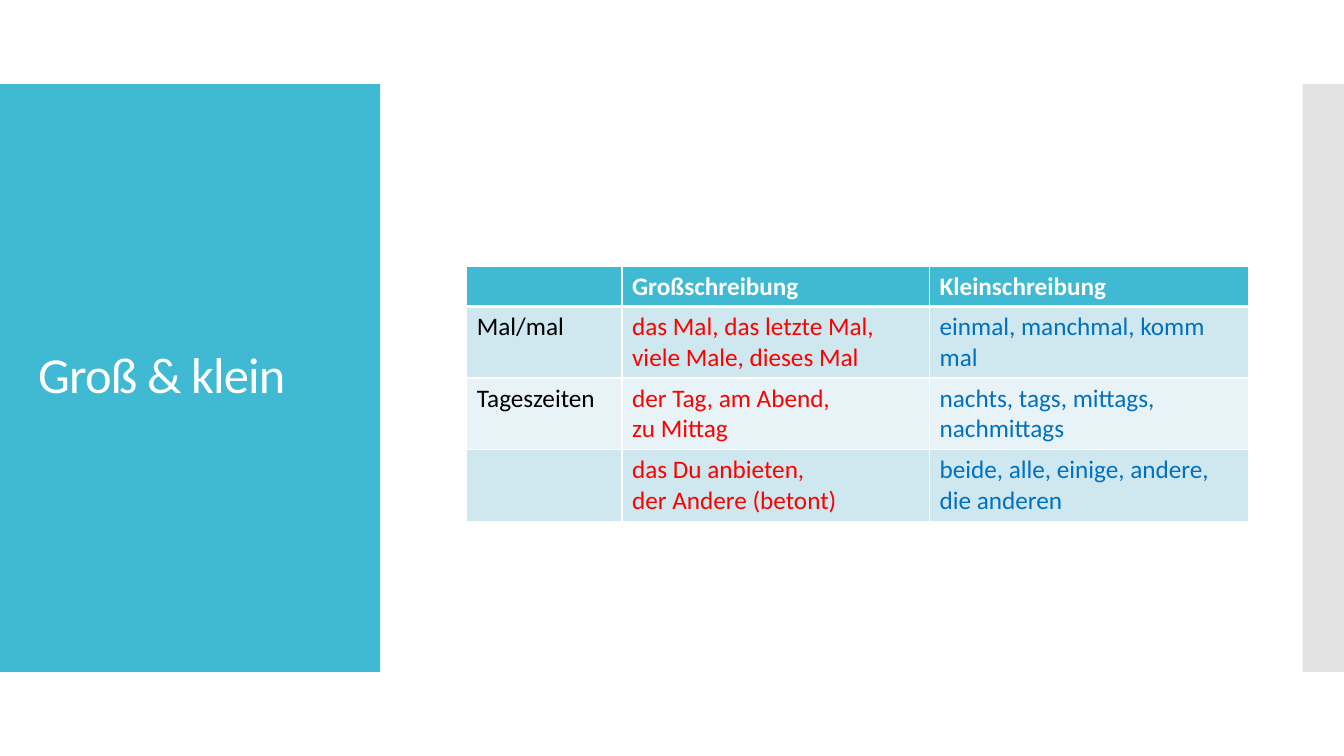
from dataclasses import dataclass

from lxml.etree import SubElement
from pptx import Presentation
from pptx.dml.color import RGBColor
from pptx.enum.shapes import MSO_SHAPE
from pptx.enum.text import MSO_ANCHOR
from pptx.oxml.ns import qn
from pptx.util import Inches, Pt

WIDTH, HEIGHT = 13.33, 7.5
BAND_TOP, BAND_HEIGHT = HEIGHT / 9, HEIGHT * 7 / 9


@dataclass(frozen=True)
class Theme:
    font: str = "Calibri"
    title_size: int = 36
    table_size: int = 18
    accent: str = "40BAD2"
    edge: str = "C8C8C8"
    white: str = "FFFFFF"
    label: str = "000000"
    uppercase: str = "FF0000"
    lowercase: str = "0070C0"
    bands: tuple = ("CFE7EE", "E8F3F7")


THEME = Theme()
COLUMN_WIDTHS = (1.54, 3.05, 3.16)
HEADER_HEIGHT, ROW_HEIGHT = 0.4, 0.71
ROWS = (
    ("", "Großschreibung", "Kleinschreibung"),
    ("Mal/mal", "das Mal, das letzte Mal, viele Male, dieses Mal",
     "einmal, manchmal, komm mal"),
    ("Tageszeiten", "der Tag, am Abend,\nzu Mittag",
     "nachts, tags, mittags, nachmittags"),
    ("", "das Du anbieten,\nder Andere (betont)",
     "beide, alle, einige, andere, die anderen"),
)


def paint(target, color):
    target.fill.solid()
    target.fill.fore_color.rgb = RGBColor.from_string(color)


def style_text(frame, size, color, bold=False):
    for para in frame.paragraphs:
        for span in para.runs:
            span.font.name = THEME.font
            span.font.size = Pt(size)
            span.font.bold = bold
            span.font.color.rgb = RGBColor.from_string(color)


def add_band(page, left, width, color, opacity=None):
    """Add a side panel; opacity is a percentage."""
    band = page.shapes.add_shape(
        MSO_SHAPE.RECTANGLE, Inches(left), Inches(BAND_TOP),
        Inches(width), Inches(BAND_HEIGHT))
    band.shadow.inherit = False
    band.line.fill.background()
    paint(band, color)
    if opacity is not None:
        fill_color = band._element.spPr.find(qn("a:solidFill"))[0]
        SubElement(fill_color, qn("a:alpha"), val=str(opacity * 1000))


def add_title(page, text):
    box = page.shapes.add_textbox(
        Inches(0.28), Inches(1.23), Inches(3.22), Inches(5.03))
    frame = box.text_frame
    frame.word_wrap = True
    frame.vertical_anchor = MSO_ANCHOR.MIDDLE
    frame.text = text
    para = frame.paragraphs[0]
    para.line_spacing = 0.9
    style_text(frame, THEME.title_size, THEME.white)
    para.runs[0].font._element.set("spc", "-60")


def add_borders(cell, widths):
    """Draw white borders; widths maps L, R, T and B to points."""
    properties = cell._tc.get_or_add_tcPr()
    for side, width in widths.items():
        line = SubElement(properties, qn(f"a:ln{side}"), w=str(Pt(width)))
        fill = SubElement(line, qn("a:solidFill"))
        SubElement(fill, qn("a:srgbClr"), val=THEME.white)


def fill_cell(cell, text, row, column):
    header = row == 0
    add_borders(cell, {"L": 1, "R": 1, "T": 3 if row == 1 else 1,
                       "B": 3 if header else 1})
    paint(cell, THEME.accent if header else THEME.bands[(row - 1) % 2])
    cell.text_frame.text = text
    column_colors = (THEME.label, THEME.uppercase, THEME.lowercase)
    color = THEME.white if header else column_colors[column]
    style_text(cell.text_frame, THEME.table_size, color, bold=header)


def add_spelling_table(page):
    height = HEADER_HEIGHT + ROW_HEIGHT * (len(ROWS) - 1)
    table = page.shapes.add_table(
        len(ROWS), len(COLUMN_WIDTHS), Inches(4.63), Inches(2.64),
        Inches(sum(COLUMN_WIDTHS)), Inches(height)).table
    for column, width in zip(table.columns, COLUMN_WIDTHS):
        column.width = Inches(width)
    for row, texts in enumerate(ROWS):
        table.rows[row].height = Inches(ROW_HEIGHT if row else HEADER_HEIGHT)
        for column, text in enumerate(texts):
            fill_cell(table.cell(row, column), text, row, column)


def main():
    deck = Presentation()
    deck.slide_width, deck.slide_height = Inches(WIDTH), Inches(HEIGHT)
    page = deck.slides.add_slide(deck.slide_layouts[6])
    add_band(page, 0, 3.77, THEME.accent)
    add_band(page, 12.92, WIDTH - 12.92, THEME.edge, opacity=50)
    add_title(page, "Groß & klein")
    add_spelling_table(page)
    deck.save("out.pptx")


if __name__ == "__main__":
    main()
